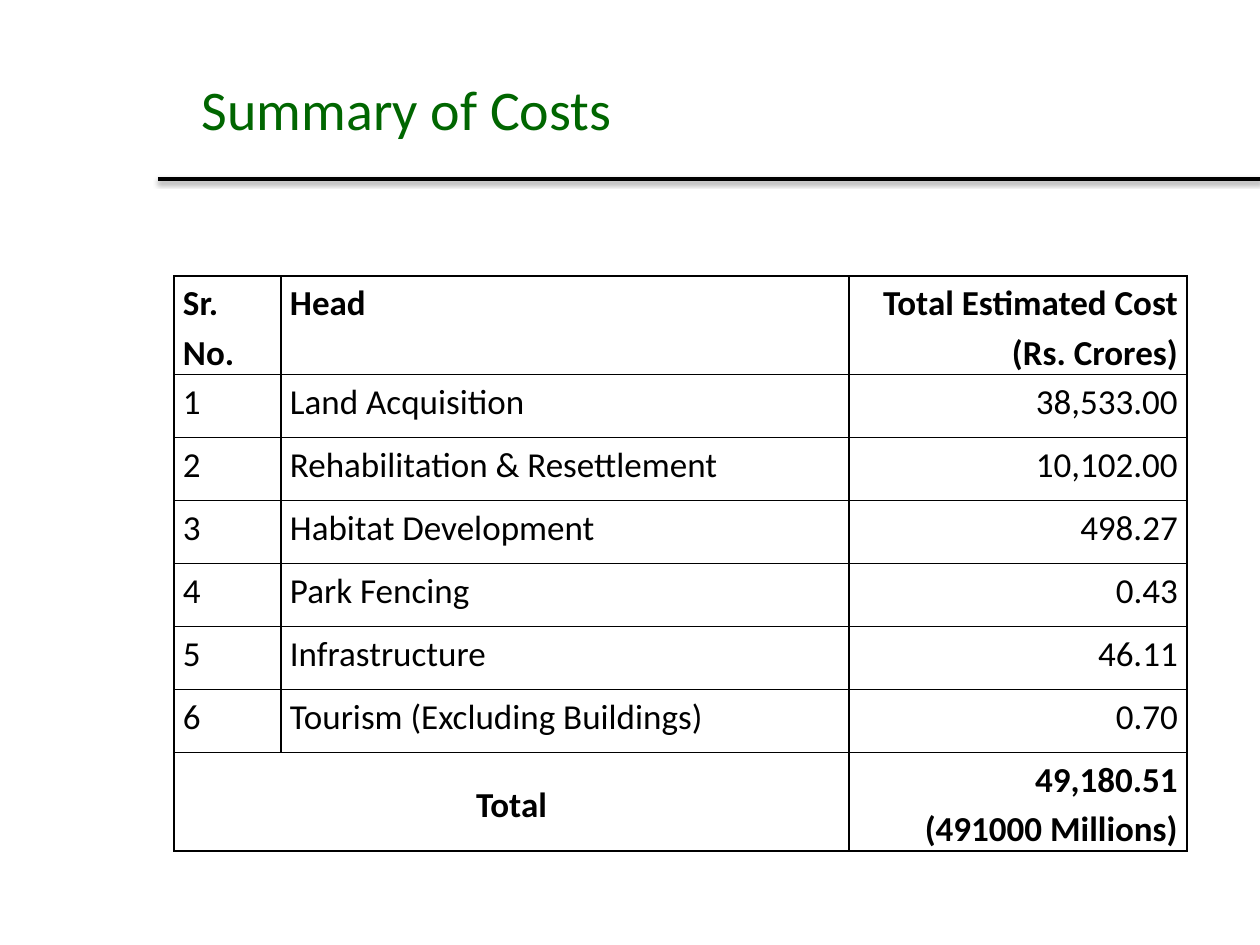
from lxml import etree
from pptx import Presentation
from pptx.dml.color import RGBColor
from pptx.enum.shapes import MSO_CONNECTOR
from pptx.enum.text import MSO_ANCHOR, PP_ALIGN
from pptx.oxml import parse_xml
from pptx.oxml.ns import nsdecls, qn
from pptx.util import Emu, Pt

STRAIGHT = MSO_CONNECTOR.STRAIGHT
LEFT, CENTER, RIGHT = PP_ALIGN.LEFT, PP_ALIGN.CENTER, PP_ALIGN.RIGHT
TOP, MIDDLE = MSO_ANCHOR.TOP, MSO_ANCHOR.MIDDLE

PX_PER_INCH = 126
FONT = "Calibri"
BLACK, GREEN = "000000", "006600"
BORDER_TAGS = ("a:lnL", "a:lnR", "a:lnT", "a:lnB")
COLUMN_WIDTHS = (107, 568, 338)
ROW_HEIGHTS = (98, 63, 63, 63, 63, 63, 63, 98)
HEADINGS = ("Sr. No.", "Head", "Total Estimated Cost (Rs. Crores)")
COSTS = (
    ("Land Acquisition", "38,533.00"),
    ("Rehabilitation & Resettlement", "10,102.00"),
    ("Habitat Development", "498.27"),
    ("Park Fencing", "0.43"),
    ("Infrastructure", "46.11"),
    ("Tourism (Excluding Buildings)", "0.70"),
)
TOTAL_LINES = ("49,180.51", "(491000 Millions)")


def px(length):
    """Turn a length in px into EMU."""
    return Emu(round(length * 914400 / PX_PER_INCH))


def color(value):
    """Turn a hex string into a colour."""
    return RGBColor.from_string(value)


def add_run(paragraph, text, size, hex_color, bold=False):
    """Add one formatted run to a paragraph."""
    run = paragraph.add_run()
    run.text = text
    run.font.name = FONT
    run.font.size = Pt(size)
    run.font.bold = bold
    run.font.color.rgb = color(hex_color)


def set_title(slide, text):
    """Place and fill the title placeholder."""
    title = slide.shapes.title
    title.left, title.top, title.width, title.height = map(px, (189, 38, 1029, 141))
    title.text_frame.vertical_anchor = MIDDLE
    paragraph = title.text_frame.paragraphs[0]
    paragraph.alignment = LEFT
    add_run(paragraph, text, 32, GREEN)


def add_rule(slide):
    """Draw the shadowed rule below the title."""
    rule = slide.shapes.add_connector(STRAIGHT, px(158), px(179), px(1260), px(179))
    rule.line.color.rgb = color(BLACK)
    rule.line.width = Pt(2)
    effects = etree.SubElement(rule.line._get_or_add_ln().getparent(), qn("a:effectLst"))
    effects.append(parse_xml(
        f'<a:outerShdw {nsdecls("a")} blurRad="{Pt(3.1)}" dist="{Pt(1.6)}" '
        f'dir="5400000" rotWithShape="0"><a:srgbClr val="{BLACK}">'
        '<a:alpha val="38000"/></a:srgbClr></a:outerShdw>'))


def set_borders(cell):
    """Draw thin black borders on all sides of a cell."""
    properties = cell._tc.get_or_add_tcPr()
    for position, tag in enumerate(BORDER_TAGS):
        properties.insert(position, parse_xml(
            f'<{tag} {nsdecls("a")} w="{Pt(1)}"><a:solidFill>'
            f'<a:srgbClr val="{BLACK}"/></a:solidFill></{tag}>'))


def fill_cell(cell, lines, alignment=LEFT, bold=False, anchor=TOP):
    """Write one paragraph per line into a cell."""
    cell.vertical_anchor = anchor
    for index, text in enumerate(lines):
        frame = cell.text_frame
        paragraph = frame.add_paragraph() if index else frame.paragraphs[0]
        paragraph.alignment = alignment
        paragraph.line_spacing = 1.15
        add_run(paragraph, text, 20, BLACK, bold)


def add_cost_table(slide):
    """Build the bordered table of costs with its total row."""
    table = slide.shapes.add_table(
        len(ROW_HEIGHTS), len(COLUMN_WIDTHS), px(174), px(276),
        px(sum(COLUMN_WIDTHS)), px(sum(ROW_HEIGHTS))).table
    table.first_row = table.horz_banding = False
    for column, width in zip(table.columns, COLUMN_WIDTHS):
        column.width = px(width)
    for row, height in zip(table.rows, ROW_HEIGHTS):
        row.height = px(height)
    for cell in table.iter_cells():
        cell.fill.background()
        set_borders(cell)
        cell.margin_left = cell.margin_right = px(9)
        cell.margin_top = cell.margin_bottom = 0

    numbered = [(str(number), *cost) for number, cost in enumerate(COSTS, 1)]
    for row, texts in enumerate([HEADINGS, *numbered]):
        for column, text in enumerate(texts):
            alignment = RIGHT if column == 2 else LEFT
            fill_cell(table.cell(row, column), [text], alignment, bold=row == 0)

    last = len(ROW_HEIGHTS) - 1
    table.cell(last, 0).merge(table.cell(last, 1))
    fill_cell(table.cell(last, 0), ["Total"], CENTER, True, MIDDLE)
    fill_cell(table.cell(last, 2), TOTAL_LINES, RIGHT, True)


def main():
    """Build and save the slide."""
    presentation = Presentation()
    presentation.slide_width, presentation.slide_height = px(1260), px(945)
    slide = presentation.slides.add_slide(presentation.slide_layouts[5])
    add_rule(slide)
    set_title(slide, "Summary of Costs")
    add_cost_table(slide)
    presentation.save("out.pptx")


if __name__ == "__main__":
    main()
